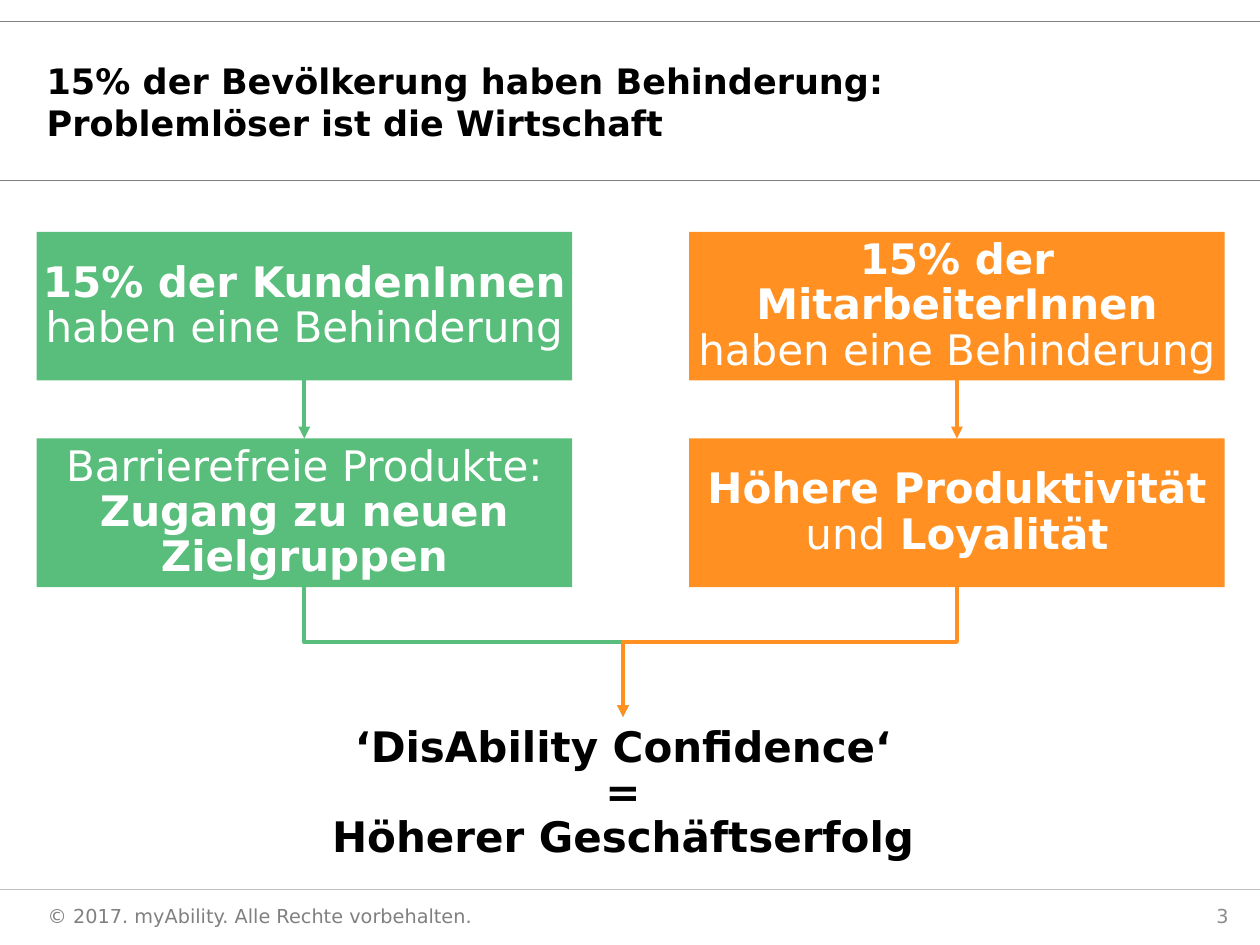
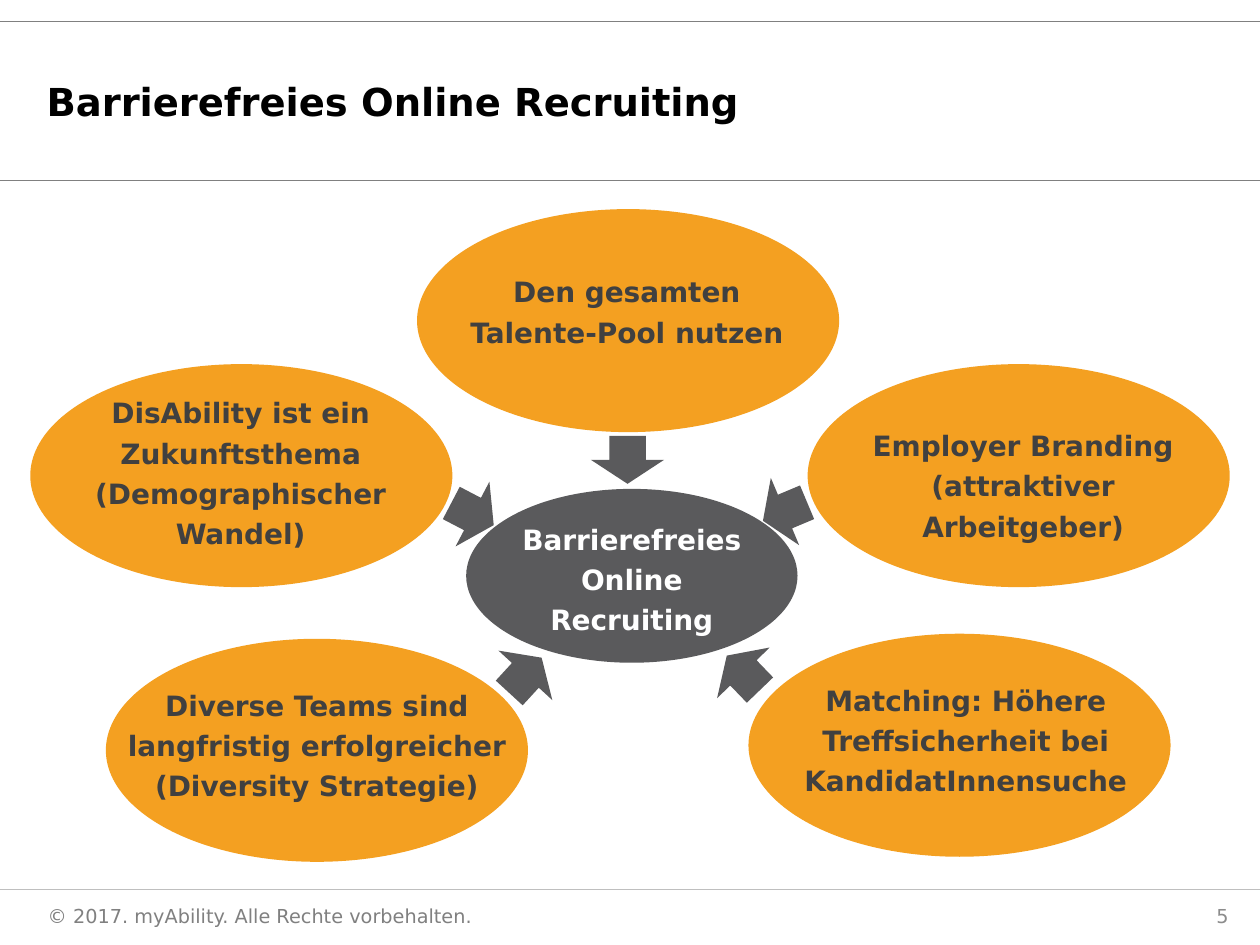
"""Build two slides on inclusive business and accessible online recruiting."""
from dataclasses import dataclass
from typing import Any, NamedTuple

from lxml import etree
from pptx import Presentation
from pptx.dml.color import RGBColor
from pptx.enum.shapes import MSO_CONNECTOR, MSO_SHAPE
from pptx.enum.text import MSO_ANCHOR, MSO_AUTO_SIZE, PP_ALIGN
from pptx.oxml.ns import qn
from pptx.util import Inches, Pt

RECTANGLE, ELLIPSE, ARROW = MSO_SHAPE.RECTANGLE, MSO_SHAPE.OVAL, MSO_SHAPE.RIGHT_ARROW
STRAIGHT, ELBOW = MSO_CONNECTOR.STRAIGHT, MSO_CONNECTOR.ELBOW
LEFT, CENTER, RIGHT = PP_ALIGN.LEFT, PP_ALIGN.CENTER, PP_ALIGN.RIGHT
TOP, MIDDLE = MSO_ANCHOR.TOP, MSO_ANCHOR.MIDDLE
NO_FIT = MSO_AUTO_SIZE.NONE

COLUMNS, ROWS = 100, 75
CELL = Inches(0.1)
TITLE_ONLY = 5
TYPEFACE = "DejaVu Sans"
COLORS = {
    "text": "000000",
    "white": "FFFFFF",
    "rule": "808080",
    "footer_rule": "BFBFBF",
    "copyright": "808080",
    "page": "8C8C8C",
    "customers": "59BD7B",
    "staff": "FF9021",
    "benefit": "F4A021",
    "benefit_text": "404040",
    "core": "5A5A5C",
}
COPYRIGHT = "© 2017. myAbility. Alle Rechte vorbehalten."


class Area(NamedTuple):
    """Left, top, width and height in grid cells."""

    col: float
    row: float
    cols: float
    rows: float

    def lengths(self) -> list[int]:
        """Return the area in slide units."""
        return [cells(value) for value in self]


class Run(NamedTuple):
    """A stretch of text of one weight."""

    text: str
    bold: bool = True


@dataclass(frozen=True)
class TextStyle:
    """Look and placement of a text."""

    size: int
    color: str
    align: Any = CENTER
    anchor: Any = MIDDLE
    spacing: float = 1.0
    margins: tuple[float, float] = (1, 0.5)


@dataclass(frozen=True)
class Branch:
    """A fact, the effect that follows from it, and their column."""

    color: str
    col: float
    fact: tuple[Run, ...]
    effect: tuple[Run, ...]


class Benefit(NamedTuple):
    """An ellipse, with the area of its caption."""

    col: float
    row: float
    caption: Area
    text: str


class Pointer(NamedTuple):
    """A block arrow turned towards the core."""

    col: float
    row: float
    angle: float


FOOTER = TextStyle(11, "copyright", LEFT)
PAGE = TextStyle(11, "page", RIGHT)
CARD = TextStyle(24, "white", spacing=0.9, margins=(0.4, 1.3))
RESULT = TextStyle(24, "text", spacing=0.9, margins=(1.3, 1.3))
CAPTION = TextStyle(16, "benefit_text", anchor=TOP, spacing=1.2)
CORE = TextStyle(16, "white", spacing=1.2, margins=(0.4, 0.5))

TITLE_AREA = Area(2.7, 1.8, 83.1, 12.5)
RULES = ((1.7, "rule"), (14.3, "rule"), (70.6, "footer_rule"))

CARD_COLS, CARD_ROWS = 42.5, 11.8
FACT_ROW, EFFECT_ROW = 18.4, 34.8
RESULT_AREA = Area(18.5, 56.9, 61.9, 12.2)
BRANCHES = (
    Branch("customers", 2.9,
           (Run("15% der KundenInnen"), Run(" haben eine Behinderung", False)),
           (Run("Barrierefreie Produkte: ", False), Run("Zugang zu neuen Zielgruppen"))),
    Branch("staff", 54.7,
           (Run("15% der MitarbeiterInnen "), Run("haben eine Behinderung", False)),
           (Run("Höhere Produktivität "), Run("und", False), Run(" Loyalität"))),
)

BENEFIT_COLS, BENEFIT_ROWS = 33.5, 17.7
CORE_AREA = Area(37, 38.8, 26.3, 13.8)
BENEFITS = (
    Benefit(59.4, 50.3, Area(62.1, 53.2, 29.1, 10.4),
            "Matching: Höhere Treffsicherheit bei KandidatInnensuche"),
    Benefit(64.1, 28.9, Area(66.3, 33, 29.8, 10.7),
            "Employer Branding (attraktiver Arbeitgeber)"),
    Benefit(2.4, 28.9, Area(4.2, 30.4, 29.8, 13.6),
            "DisAbility ist ein Zukunftsthema (Demographischer Wandel)"),
    Benefit(8.4, 50.7, Area(8.9, 53.6, 32.5, 13.1),
            "Diverse Teams sind langfristig erfolgreicher (Diversity Strategie)"),
    Benefit(33.1, 16.6, Area(35.7, 20.8, 28.1, 7.1),
            "Den gesamten Talente-Pool nutzen"),
)
POINTERS = (
    Pointer(47.9, 33.6, 90),
    Pointer(35.6, 37.9, 27.6),
    Pointer(60.4, 37.7, 157.2),
    Pointer(39.8, 50.7, 312.6),
    Pointer(57.1, 50.5, 226.1),
)


def cells(count: float) -> int:
    """Convert grid cells to slide units."""
    return round(count * CELL)


def rgb(name: str) -> RGBColor:
    """Look up a named colour."""
    return RGBColor.from_string(COLORS[name])


def apply(target: Any, values: dict[str, Any]) -> None:
    """Set each format value on the target."""
    for key, value in values.items():
        setattr(target, key, value)


def write(frame: Any, lines: list[tuple[Run, ...]], style: TextStyle) -> None:
    """Fill a text frame, one paragraph per line."""
    side, edge = (cells(margin) for margin in style.margins)
    apply(frame, {
        "word_wrap": True, "auto_size": NO_FIT, "vertical_anchor": style.anchor,
        "margin_left": side, "margin_right": side,
        "margin_top": edge, "margin_bottom": edge,
    })
    for index, line in enumerate(lines):
        paragraph = frame.add_paragraph() if index else frame.paragraphs[0]
        apply(paragraph, {"alignment": style.align, "line_spacing": style.spacing})
        for text, bold in line:
            run = paragraph.add_run()
            run.text = text
            apply(run.font, {"name": TYPEFACE, "size": Pt(style.size), "bold": bold})
            run.font.color.rgb = rgb(style.color)


def add_text(slide: Any, area: Area, run: Run, style: TextStyle) -> None:
    """Add a text box with one run."""
    write(slide.shapes.add_textbox(*area.lengths()).text_frame, [(run,)], style)


def add_figure(slide: Any, kind: Any, area: Area, color: str) -> Any:
    """Add a flat preset shape without outline."""
    figure = slide.shapes.add_shape(kind, *area.lengths())
    figure.shadow.inherit = False
    figure.fill.solid()
    figure.fill.fore_color.rgb = rgb(color)
    figure.line.fill.background()
    return figure


def add_line(slide: Any, kind: Any, ends: tuple[float, ...], color: str,
             width: float, arrow: bool = False) -> Any:
    """Add a flat connector, with an arrowhead if asked."""
    line = slide.shapes.add_connector(kind, *(cells(end) for end in ends))
    line.line.color.rgb = rgb(color)
    line.line.width = Pt(width)
    properties = line._element.spPr
    if arrow:
        etree.SubElement(properties.find(qn("a:ln")), qn("a:tailEnd"), type="triangle")
    etree.SubElement(properties, qn("a:effectLst"))
    return line


def add_merge(slide: Any, start: tuple[float, float], end: tuple[float, float],
              color: str) -> None:
    """Add an elbow arrow that leaves and arrives vertically."""
    (x1, y1), (x2, y2) = start, end
    mid_x, mid_y = (x1 + x2) / 2, (y1 + y2) / 2
    half_run, half_rise = (y2 - y1) / 2, abs(x2 - x1) / 2
    direction, angle = (-1, 270) if x2 > x1 else (1, 90)
    ends = (mid_x - direction * half_run, mid_y - half_rise,
            mid_x + direction * half_run, mid_y + half_rise)
    merge = add_line(slide, ELBOW, ends, color, 2.25, arrow=True)
    merge._element.spPr.find(qn("a:xfrm")).set("rot", str(angle * 60000))


def add_base(deck: Any, title: str, size: int, page: int) -> Any:
    """Add a slide with title, rules and footer."""
    slide = deck.slides.add_slide(deck.slide_layouts[TITLE_ONLY])
    for row, color in RULES:
        add_line(slide, STRAIGHT, (0, row, COLUMNS, row), color, 0.5)
    heading = slide.shapes.title
    apply(heading, dict(zip(("left", "top", "width", "height"), TITLE_AREA.lengths())))
    write(heading.text_frame, [(Run(title),)], TextStyle(size, "text", LEFT))
    add_text(slide, Area(2.8, 70.7, 55.1, 3.9), Run(COPYRIGHT, False), FOOTER)
    add_text(slide, Area(90.6, 70.7, 7.9, 3.9), Run(str(page), False), PAGE)
    return slide


def add_business_case(deck: Any) -> None:
    """Add the slide that leads from two facts to one result."""
    slide = add_base(
        deck, "15% der Bevölkerung haben Behinderung: Problemlöser ist die Wirtschaft", 20, 3)
    goal = (RESULT_AREA.col + RESULT_AREA.cols / 2, RESULT_AREA.row)
    for branch in BRANCHES:
        middle = branch.col + CARD_COLS / 2
        add_merge(slide, (middle, 45), goal, branch.color)
        for row, runs in ((FACT_ROW, branch.fact), (EFFECT_ROW, branch.effect)):
            area = Area(branch.col, row, CARD_COLS, CARD_ROWS)
            card = add_figure(slide, RECTANGLE, area, branch.color)
            write(card.text_frame, [runs], CARD)
        add_line(slide, STRAIGHT, (middle, FACT_ROW + CARD_ROWS, middle, EFFECT_ROW),
                 branch.color, 2.25, arrow=True)
    result = slide.shapes.add_textbox(*RESULT_AREA.lengths())
    lines = ("‘DisAbility Confidence‘", "=", "Höherer Geschäftserfolg")
    write(result.text_frame, [(Run(line),) for line in lines], RESULT)


def add_recruiting(deck: Any) -> None:
    """Add the slide with five benefits around a core."""
    topic = "Barrierefreies Online Recruiting"
    slide = add_base(deck, topic, 22, 5)
    for col, row, angle in POINTERS:
        add_figure(slide, ARROW, Area(col, row, 3.8, 5.8), "core").rotation = angle
    for benefit in BENEFITS:
        area = Area(benefit.col, benefit.row, BENEFIT_COLS, BENEFIT_ROWS)
        add_figure(slide, ELLIPSE, area, "benefit")
        add_text(slide, benefit.caption, Run(benefit.text), CAPTION)
    core = add_figure(slide, ELLIPSE, CORE_AREA, "core")
    write(core.text_frame, [(Run(topic),)], CORE)


def main() -> None:
    """Build and save the deck."""
    deck = Presentation()
    apply(deck, {"slide_width": cells(COLUMNS), "slide_height": cells(ROWS)})
    add_business_case(deck)
    add_recruiting(deck)
    deck.save("out.pptx")


if __name__ == "__main__":
    main()
